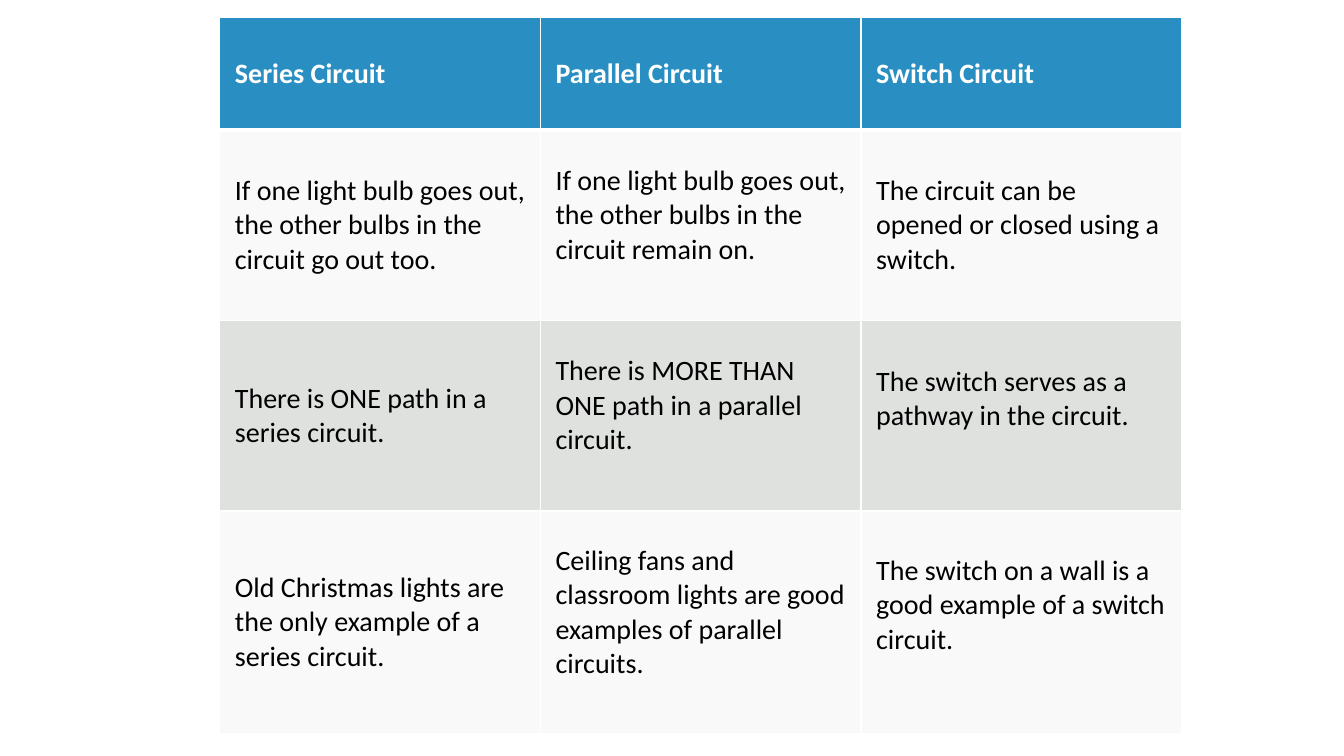
"""Slide comparing series, parallel and switch circuits in a table."""
from lxml.etree import SubElement
from pptx import Presentation
from pptx.dml.color import RGBColor
from pptx.enum.text import MSO_ANCHOR
from pptx.oxml.ns import qn
from pptx.util import Inches, Pt

COLORS = {
    "white": "FFFFFF",
    "black": "000000",
    "header": "298FC2",
    "light": "F9F9F9",
    "gray": "DFE1DF",
}
INSET = 0.15
ROW_HEIGHTS = [1.12, 1.89, 1.89, 2.21]
ROW_FILLS = ["header", "light", "gray", "light"]
COLUMN_WIDTH = 3.18
CIRCUITS = [
    ["Series Circuit", "Parallel Circuit", "Switch Circuit"],
    [
        "If one light bulb goes out, the other bulbs in the circuit go out too.",
        "If one light bulb goes out, the other bulbs in the circuit remain on.",
        "The circuit can be opened or closed using a switch.",
    ],
    [
        "There is ONE path in a series circuit.",
        "There is MORE THAN ONE path in a parallel circuit.",
        "The switch serves as a pathway in the circuit.",
    ],
    [
        "Old Christmas lights are the only example of a series circuit.",
        "Ceiling fans and classroom lights are good examples of parallel circuits.",
        "The switch on a wall is a good example of a switch circuit.",
    ],
]
TEXT_LIFTS = [[0, 0, 0], [0, 0.2, 0], [0, 0.2, 0.34], [0, 0.2, 0.34]]


def write_cell(cell, text, *, color, fill, bold=False, lift=0, top=1, bottom=1):
    """Fill one cell with text, margins, borders and background."""
    cell.margin_left = cell.margin_right = cell.margin_top = Inches(INSET)
    cell.margin_bottom = Inches(INSET + lift)
    cell.vertical_anchor = MSO_ANCHOR.MIDDLE
    properties = cell._tc.get_or_add_tcPr()
    for side, width in (("L", 1), ("R", 1), ("T", top), ("B", bottom)):
        border = SubElement(properties, qn(f"a:ln{side}"), w=str(Pt(width)))
        border_fill = SubElement(border, qn("a:solidFill"))
        SubElement(border_fill, qn("a:srgbClr"), val=COLORS["white"])
    cell.fill.solid()
    cell.fill.fore_color.rgb = RGBColor.from_string(COLORS[fill])
    run = cell.text_frame.paragraphs[0].add_run()
    run.text = text
    run.font.name = "Calibri"
    run.font.size = Pt(20)
    run.font.bold = bold
    run.font.color.rgb = RGBColor.from_string(COLORS[color])


presentation = Presentation()
presentation.slide_width = Inches(13.33)
presentation.slide_height = Inches(7.5)
slide = presentation.slides.add_slide(presentation.slide_layouts[6])

comparison = slide.shapes.add_table(
    len(CIRCUITS), len(CIRCUITS[0]), Inches(2.18), Inches(0.17),
    Inches(COLUMN_WIDTH * len(CIRCUITS[0])), Inches(sum(ROW_HEIGHTS)),
).table
for column in comparison.columns:
    column.width = Inches(COLUMN_WIDTH)

for row_index, facts in enumerate(CIRCUITS):
    comparison.rows[row_index].height = Inches(ROW_HEIGHTS[row_index])
    is_header = row_index == 0
    for column_index, fact in enumerate(facts):
        write_cell(
            comparison.cell(row_index, column_index),
            fact,
            color="white" if is_header else "black",
            fill=ROW_FILLS[row_index],
            bold=is_header,
            lift=TEXT_LIFTS[row_index][column_index],
            top=3 if row_index == 1 else 1,
            bottom=3 if is_header else 1,
        )

presentation.save("out.pptx")
